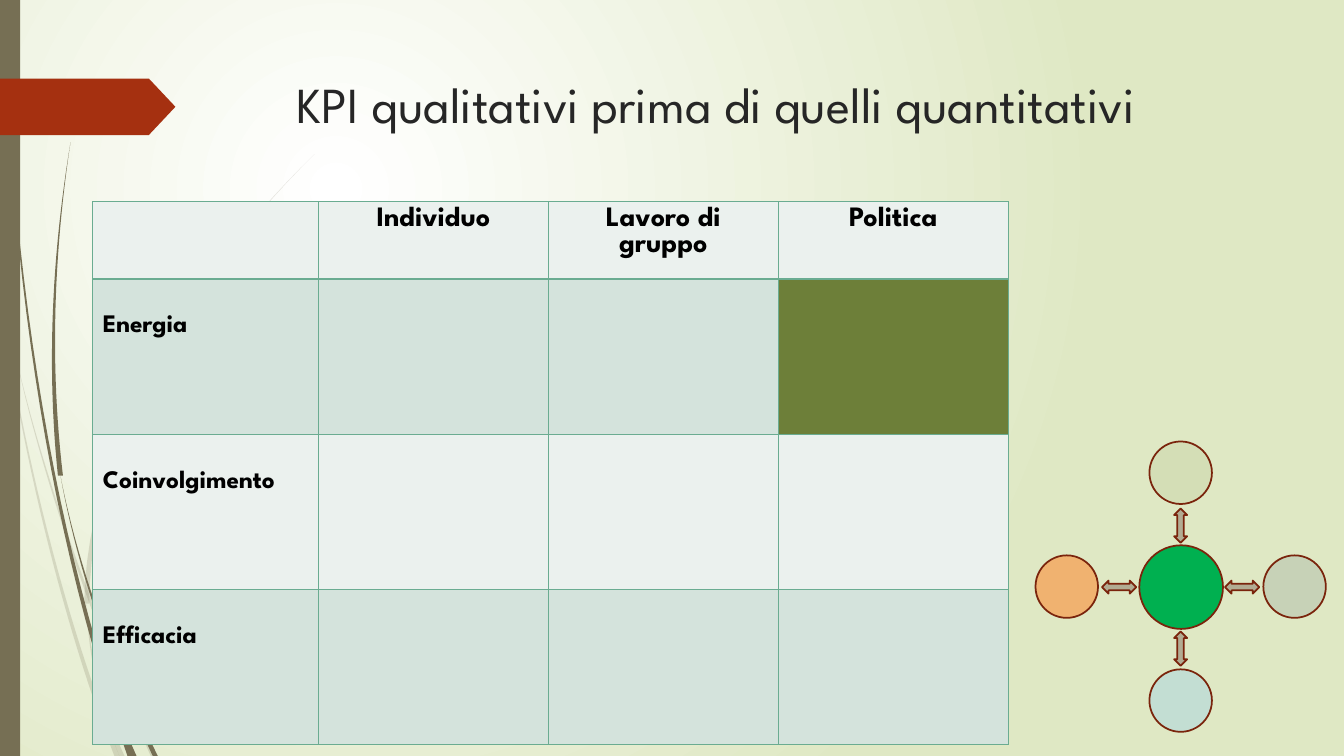
from lxml.etree import SubElement
from pptx import Presentation
from pptx.dml.color import RGBColor
from pptx.enum.shapes import MSO_SHAPE
from pptx.enum.text import PP_ALIGN
from pptx.oxml import parse_xml
from pptx.oxml.ns import nsdecls, qn
from pptx.util import Pt

PX = 9144  # 100 px to the inch
THEME = {
    "font": "League Spartan",
    "title_size": 36, "header_size": 20, "label_size": 18,
    "title": "262626", "text": "000000",
    "glow": "FFFFFF", "backdrop": "DFE8C4",
    "stem": "766F54", "tag": "A53010",
    "border": "6AAC91", "light_row": "EBF1EE", "dark_row": "D4E3DC", "highlight": "6D7F39",
    "outline": "7A240C", "arrow": "B2AC93", "hub": "00B050",
    "top": "D4DEB6", "right": "C7D2B7", "bottom": "C3DED3", "left": "F0B270",
}


def write(frame, text, size, color, bold=False, align=PP_ALIGN.LEFT):
    frame.word_wrap = True
    paragraph = frame.paragraphs[0]
    paragraph.alignment = align
    run = paragraph.add_run()
    run.text = text
    run.font.name = THEME["font"]
    run.font.size = Pt(THEME[size])
    run.font.bold = bold
    run.font.color.rgb = RGBColor.from_string(THEME[color])


def paint(shape, fill, line=None):
    shape.shadow.inherit = False
    shape.fill.solid()
    shape.fill.fore_color.rgb = RGBColor.from_string(THEME[fill])
    if line:
        shape.line.color.rgb = RGBColor.from_string(THEME[line])
        shape.line.width = Pt(1.25)
    else:
        shape.line.fill.background()


deck = Presentation()
deck.slide_width, deck.slide_height = 1333 * PX, 750 * PX
slide = deck.slides.add_slide(deck.slide_layouts[6])
shapes = slide.shapes

# Background: a radial glow centred in the upper left
backdrop = slide.background.fill
backdrop.gradient()
for stop, color in zip(backdrop.gradient_stops, ("glow", "backdrop")):
    stop.color.rgb = RGBColor.from_string(THEME[color])
gradient = slide.element.find(".//" + qn("a:gradFill"))
gradient.replace(gradient.find(qn("a:lin")), parse_xml(
    f'<a:path {nsdecls("a")} path="circle">'
    '<a:fillToRect l="50000" t="50000" r="100000" b="100000"/></a:path>'))

# Grass stems: Bézier curves that widen from tip to root
faint_stems = [
    ((0, 290), (20, 440), (64, 620), (116, 750)),
    ((14, 345), (40, 470), (100, 635), (152, 750)),
    ((86, 599), (88, 655), (104, 712), (121, 750)),
    ((312, 153), (200, 262), (88, 430), (86, 599)),
]
solid_stems = [
    ((3, 0), (12, 290), (54, 540), (129, 750)),
    ((60, 472), (78, 570), (118, 675), (154, 750)),
    ((70, 141), (52, 255), (48, 365), (60, 472)),
    ((107, 645), (110, 690), (121, 722), (133, 750)),
    ((260, 344), (190, 412), (110, 530), (108, 645)),
]
STEPS, ROOT_WIDTH = 24, 5
for curve in faint_stems + solid_stems:
    left_edge, right_edge = [], []
    for step in range(STEPS + 1):
        t = step / STEPS
        x, y = [(1 - t)**3 * a + 3 * t * (1 - t)**2 * b + 3 * t**2 * (1 - t) * c + t**3 * d
                for a, b, c, d in zip(*curve)]
        half = ROOT_WIDTH * t / 2
        left_edge.append(((x - half) * PX, y * PX))
        right_edge.append(((x + half) * PX, y * PX))
    builder = shapes.build_freeform(*left_edge[0])
    builder.add_line_segments(left_edge[1:] + right_edge[::-1], close=True)
    stem = builder.convert_to_shape()
    paint(stem, "stem")
    if curve in faint_stems:
        tint = stem.element.spPr.find(".//" + qn("a:srgbClr"))
        SubElement(tint, qn("a:alpha"), val="20000")

# Side bar and red tag
side_bar = shapes.add_shape(MSO_SHAPE.RECTANGLE, 0, 0, 20 * PX, 750 * PX)
paint(side_bar, "stem")
tag = shapes.add_shape(MSO_SHAPE.PENTAGON, 0, 78 * PX, 174 * PX, 56 * PX)
tag.adjustments[0] = 0.47
paint(tag, "tag")

# Title
title = shapes.add_textbox(284 * PX, 68 * PX, 975 * PX, 140 * PX)
write(title.text_frame, "KPI qualitativi prima di quelli quantitativi", "title_size", "title")

# KPI table
headers = ["", "Individuo", "Lavoro di gruppo", "Politica"]
kpis = ["Energia", "Coinvolgimento", "Efficacia"]
rows = [headers] + [[kpi, "", "", ""] for kpi in kpis]
kpi_table = shapes.add_table(4, 4, 92 * PX, 200 * PX, 908 * PX, 510 * PX).table
for index in range(4):
    kpi_table.columns[index].width = (228 if index else 224) * PX
    kpi_table.rows[index].height = (154 if index else 48) * PX
for row, texts in enumerate(rows):
    for column, text in enumerate(texts):
        cell = kpi_table.cell(row, column)
        if text and row == 0:
            write(cell.text_frame, text, "header_size", "text", bold=True, align=PP_ALIGN.CENTER)
        elif text:
            cell.margin_top = 36 * PX
            write(cell.text_frame, text, "label_size", "text", bold=True)
        properties = cell._tc.get_or_add_tcPr()
        for side in ("a:lnL", "a:lnR", "a:lnT", "a:lnB"):
            border = SubElement(properties, qn(side), w=str(Pt(1)))
            SubElement(SubElement(border, qn("a:solidFill")), qn("a:srgbClr"), val=THEME["border"])
        fill = "dark_row" if row % 2 else "light_row"
        if (row, column) == (1, 3):
            fill = "highlight"
        cell.fill.solid()
        cell.fill.fore_color.rgb = RGBColor.from_string(THEME[fill])

# Hub with four satellites and double arrows
HUB_X, HUB_Y, ORBIT, ARROW_ORBIT = 1171, 582, 113, 61
parts = [(MSO_SHAPE.OVAL, 0, 0, 83, 83, "hub", 0)]
for name, dx, dy in [("bottom", 0, 1), ("top", 0, -1), ("right", 1, 0), ("left", -1, 0)]:
    parts.append((MSO_SHAPE.OVAL, dx * ORBIT, dy * ORBIT, 62, 62, name, 0))
    parts.append((MSO_SHAPE.LEFT_RIGHT_ARROW, dx * ARROW_ORBIT, dy * ARROW_ORBIT,
                  34, 13, "arrow", 270 if dy else 0))
for kind, dx, dy, width, height, fill, rotation in parts:
    part = shapes.add_shape(kind, (HUB_X + dx - width // 2) * PX, (HUB_Y + dy - height // 2) * PX,
                            width * PX, height * PX)
    part.rotation = rotation
    paint(part, fill, line="outline")

deck.save("out.pptx")
